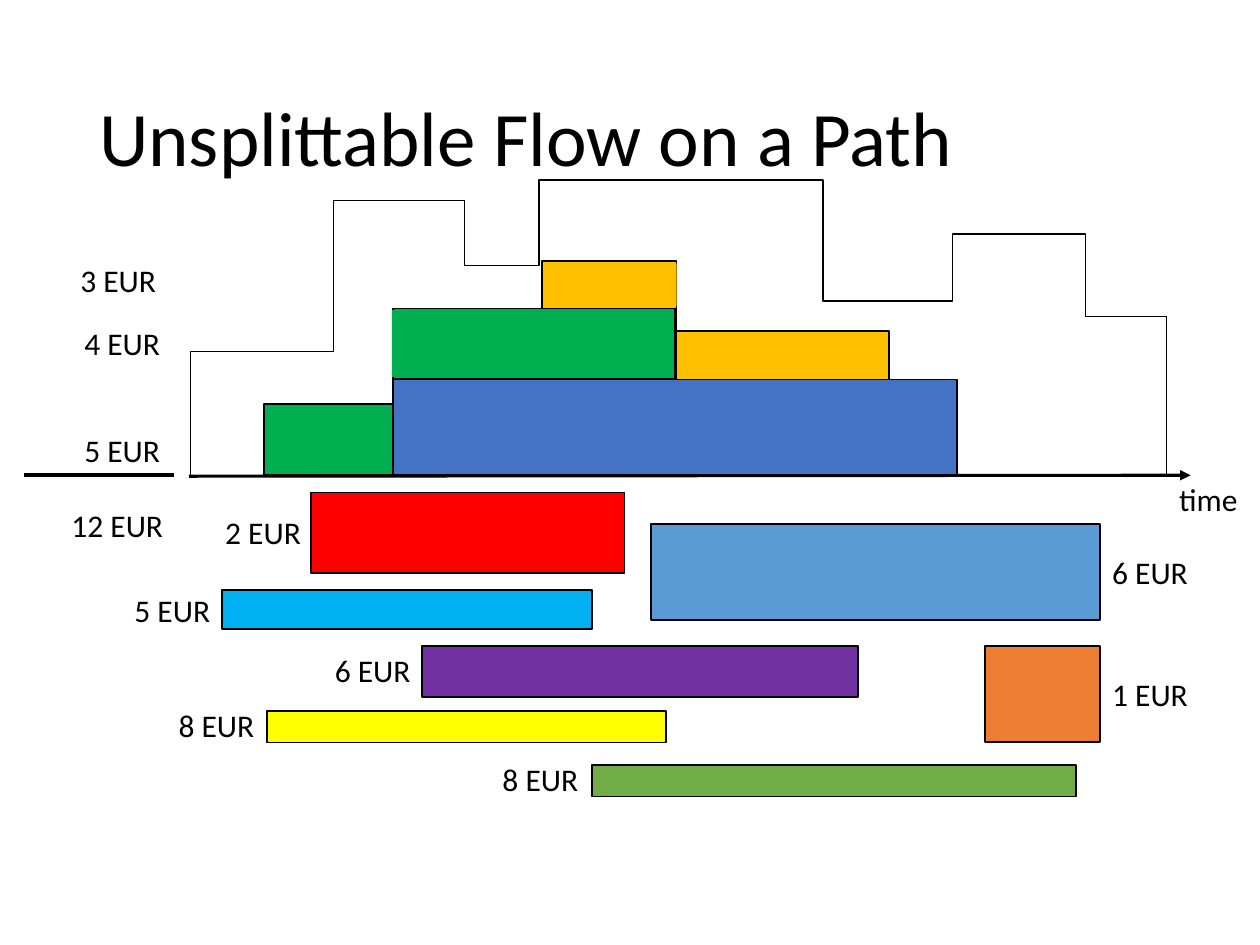
from typing import NamedTuple, Optional

from pptx import Presentation
from pptx import util as u
from pptx.dml.color import RGBColor
from pptx.enum import shapes, text
from pptx.oxml import xmlchemy

FONT = "Calibri"
BLACK, GREEN, AMBER = "000000", "00B050", "FFC000"
AXIS_Y = 9.58
LABEL_H = 1.02


class Bar(NamedTuple):
    x: float
    y: float
    w: float
    h: float
    fill: str
    line: Optional[str] = BLACK


class Label(NamedTuple):
    x: float
    y: float
    words: str
    w: float = 2.06


class Step(NamedTuple):
    right: float
    y: float


PACKED = [
    Bar(10.92, 5.26, 2.72, 0.97, AMBER),
    Bar(12.6, 6.22, 1.04, 1.42, GREEN),
    Bar(7.92, 6.22, 5.69, 1.42, GREEN),
    Bar(7.9, 6.25, 1.65, 1.35, GREEN, None),
    Bar(11.53, 5.31, 2.11, 0.86, AMBER, None),
    Bar(7.92, 7.65, 11.38, 1.93, "4472C4"),
    Bar(5.33, 8.15, 2.59, 1.42, GREEN),
    Bar(13.64, 6.68, 4.29, 0.97, AMBER),
]
REJECTED = [
    Bar(13.13, 10.57, 9.04, 1.93, "5B9BD5"),
    Bar(4.47, 11.89, 7.47, 0.79, "00B0F0"),
    Bar(8.51, 13.03, 8.79, 1.02, "7030A0"),
    Bar(6.27, 9.93, 6.32, 1.63, "FF0000"),
    Bar(5.38, 14.33, 8.05, 0.64, "FFFF00"),
    Bar(11.94, 15.42, 9.75, 0.64, "70AD47"),
    Bar(19.86, 13.03, 2.31, 1.93, "ED7D31"),
]
LABELS = [
    Label(1.37, 5.13, "3 EUR"),
    Label(1.45, 6.4, "4 EUR"),
    Label(1.45, 8.56, "5 EUR"),
    Label(1.19, 10.08, "12 EUR", 2.39),
    Label(23.52, 9.55, "time", 1.7),
    Label(4.29, 10.21, "2 EUR"),
    Label(22.17, 11.02, "6 EUR"),
    Label(2.46, 11.79, "5 EUR"),
    Label(22.17, 13.49, "1 EUR"),
    Label(6.5, 13, "6 EUR"),
    Label(3.35, 14.1, "8 EUR"),
    Label(9.88, 15.19, "8 EUR"),
]
CAPACITY_LEFT = 3.84
CAPACITY = [
    Step(6.73, 7.09), Step(9.37, 4.04), Step(10.87, 5.36), Step(16.59, 3.63),
    Step(19.2, 6.07), Step(21.89, 4.72), Step(23.51, 6.38),
]


def rgb(value: str) -> RGBColor:
    return RGBColor.from_string(value)


def add_child(parent, tag: str, **attrs: str) -> None:
    child = xmlchemy.OxmlElement(tag)
    for name, value in attrs.items():
        child.set(name, value)
    parent.append(child)


def set_line(sp, color: str, width: float) -> None:
    sp.line.color.rgb = rgb(color)
    sp.line.width = u.Pt(width)


def add_bar(s, bar: Bar) -> None:
    sp = s.shapes.add_shape(shapes.MSO_SHAPE.RECTANGLE, *map(u.Cm, bar[:4]))
    sp.shadow.inherit = False
    sp.fill.solid()
    sp.fill.fore_color.rgb = rgb(bar.fill)
    if bar.line:
        set_line(sp, bar.line, 1)
    else:
        sp.line.fill.background()


def add_text(s, label: Label, height: float = LABEL_H, size: float = 18):
    sp = s.shapes.add_textbox(*map(u.Cm, (label.x, label.y, label.w, height)))
    tf = sp.text_frame
    tf.word_wrap = False
    tf.auto_size = text.MSO_AUTO_SIZE.SHAPE_TO_FIT_TEXT
    r = tf.paragraphs[0].add_run()
    r.text = label.words
    r.font.name = FONT
    r.font.size = u.Pt(size)
    r.font.color.rgb = rgb(BLACK)
    return tf


def add_title(s, words: str) -> None:
    tf = add_text(s, Label(1.75, 1.02, words, 21.89), 3.68, 44)
    tf.word_wrap = True
    tf.auto_size = text.MSO_AUTO_SIZE.NONE
    tf.vertical_anchor = text.MSO_ANCHOR.MIDDLE
    tf.paragraphs[0].line_spacing = 0.9


def add_line(s, x1: float, y1: float, x2: float, y2: float,
             width: float, arrow: bool = False) -> None:
    sp = s.shapes.add_connector(shapes.MSO_CONNECTOR.STRAIGHT,
                                *map(u.Cm, (x1, y1, x2, y2)))
    set_line(sp, BLACK, width)
    if arrow:
        add_child(sp.line._get_or_add_ln(), "a:tailEnd", type="triangle")
    add_child(sp._element.spPr, "a:effectLst")


def add_capacity(s, left: float, steps: list[Step]) -> None:
    points = []
    x = left
    for step in steps:
        points += [(x, step.y), (step.right, step.y)]
        x = step.right
    points.append((x, AXIS_Y))
    builder = s.shapes.build_freeform(u.Cm(left), u.Cm(AXIS_Y))
    builder.add_line_segments([(u.Cm(px), u.Cm(py)) for px, py in points], close=False)
    sp = builder.convert_to_shape()
    sp.shadow.inherit = False
    sp.fill.background()
    set_line(sp, BLACK, 0.75)


def main() -> None:
    prs = Presentation()
    prs.slide_width, prs.slide_height = u.Cm(25.4), u.Cm(19.05)
    s = prs.slides.add_slide(prs.slide_layouts[6])
    add_title(s, "Unsplittable Flow on a Path")
    add_line(s, 3.81, 9.6, 24, AXIS_Y, 1.75, arrow=True)
    add_line(s, 0.48, AXIS_Y, 3.51, AXIS_Y, 2.25)
    for bar in PACKED + REJECTED:
        add_bar(s, bar)
    add_capacity(s, CAPACITY_LEFT, CAPACITY)
    for label in LABELS:
        add_text(s, label)
    prs.save("out.pptx")


if __name__ == "__main__":
    main()
